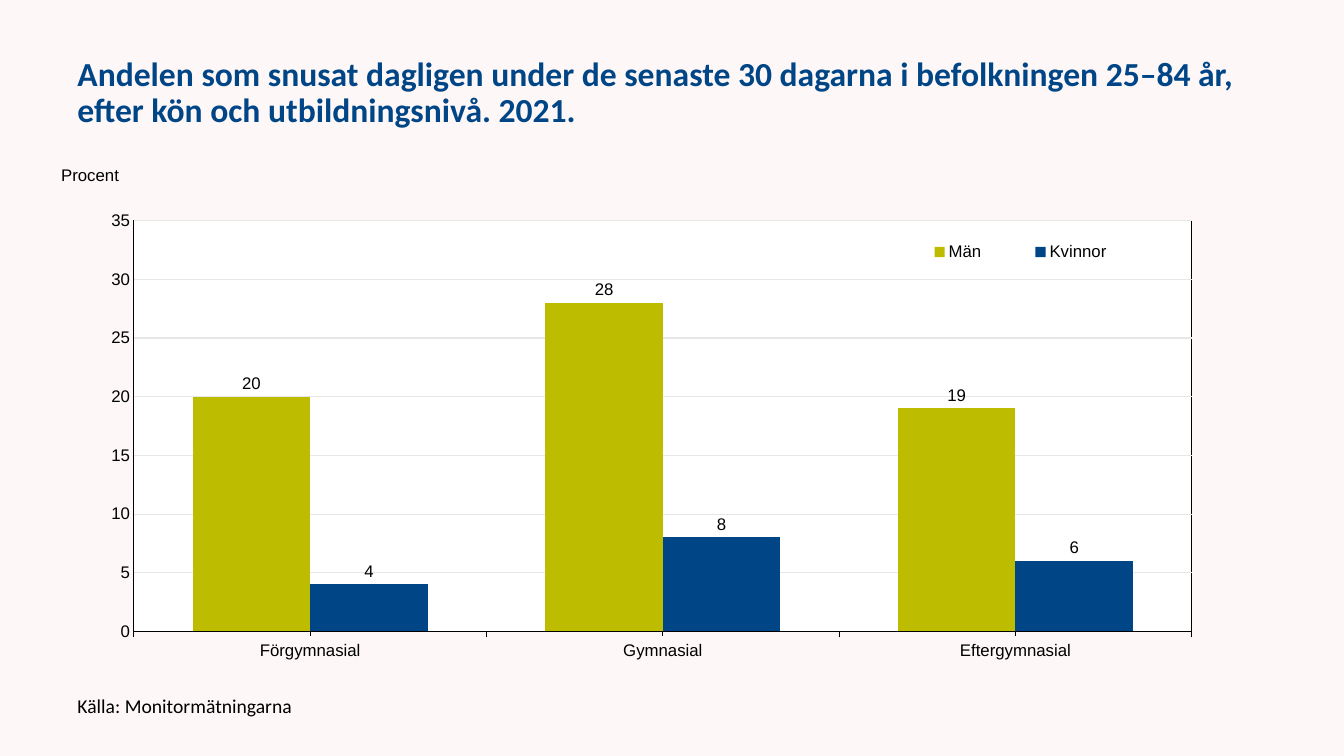
from lxml import etree
from pptx import Presentation
from pptx.chart.data import CategoryChartData
from pptx.dml.color import RGBColor
from pptx.enum import chart as ch, text
from pptx.oxml import parse_xml
from pptx.oxml.ns import nsdecls, qn
from pptx.util import Inches, Pt

COLORS = {"background": "FEF7F7", "navy": "004687", "olive": "BEBC00",
          "black": "000000", "white": "FFFFFF", "grid": "E7E6E6"}


def rgb(name):
    return RGBColor.from_string(COLORS[name])


def place(element, index, target=None, **fractions):
    """Position a chart part by fractions of the chart's width and height."""
    for old in element.findall(qn("c:layout")):
        element.remove(old)
    layout = etree.Element(qn("c:layout"))
    manual = etree.SubElement(layout, qn("c:manualLayout"))
    if target:
        etree.SubElement(manual, qn("c:layoutTarget"), val=target)
    for key in ("x", "y"):
        etree.SubElement(manual, qn(f"c:{key}Mode"), val="edge")
    for key, value in fractions.items():
        etree.SubElement(manual, qn(f"c:{key}"), val=str(value))
    element.insert(index, layout)


prs = Presentation()
prs.slide_width, prs.slide_height = Inches(13.33), Inches(7.5)
s = prs.slides.add_slide(prs.slide_layouts[6])
s.background.fill.solid()
s.background.fill.fore_color.rgb = rgb("background")

# Heading and source line
for wording, top, width, height, size, color, bold in (
        ("Andelen som snusat dagligen under de senaste 30 dagarna i befolkningen "
         "25–84 år, efter kön och utbildningsnivå. 2021.",
         0.3, 12, 1.25, 24, "navy", True),
        ("Källa: Monitormätningarna", 6.83, 6, 0.37, 14, "black", False)):
    sp = s.shapes.add_textbox(Inches(0.67), Inches(top), Inches(width), Inches(height))
    tf = sp.text_frame
    tf.word_wrap = True
    tf.vertical_anchor = text.MSO_ANCHOR.MIDDLE
    p = tf.paragraphs[0]
    p.line_spacing = 0.9
    r = p.add_run()
    r.text = wording
    r.font.name, r.font.size, r.font.bold = "Calibri", Pt(size), bold
    r.font.color.rgb = rgb(color)

# Chart
data = CategoryChartData(number_format="0")
data.categories = ["Förgymnasial", "Gymnasial", "Eftergymnasial"]
data.add_series("Män", (20, 28, 19))
data.add_series("Kvinnor", (4, 8, 6))
chart = s.shapes.add_chart(ch.XL_CHART_TYPE.COLUMN_CLUSTERED, Inches(0.54), Inches(1.55),
                           Inches(12.13), Inches(5.28), data).chart
chart.has_title = False
chart.font.name, chart.font.size = "Arial", Pt(12)
chart.font.color.rgb = rgb("black")

plot = chart.plots[0]
plot.gap_width, plot.overlap = 100, 0
plot.vary_by_categories = False
plot.has_data_labels = True
labels = plot.data_labels
labels.show_value = True
labels.position = ch.XL_LABEL_POSITION.OUTSIDE_END
labels.number_format, labels.number_format_is_linked = "0", False
for series, color in zip(plot.series, ("olive", "navy")):
    series.format.fill.solid()
    series.format.fill.fore_color.rgb = rgb(color)

# Axes
cat_axis, val_axis = chart.category_axis, chart.value_axis
cat_axis.major_tick_mark = cat_axis.minor_tick_mark = ch.XL_TICK_MARK.OUTSIDE
cat_axis.format.line.color.rgb = rgb("black")
cat_axis.format.line.width = Pt(0.75)
val_axis.minimum_scale, val_axis.maximum_scale, val_axis.major_unit = 0, 35, 5
val_axis.major_tick_mark = val_axis.minor_tick_mark = ch.XL_TICK_MARK.NONE
val_axis.format.line.fill.background()
val_axis.tick_labels.number_format = "0"
val_axis.tick_labels.number_format_is_linked = False
grid = val_axis.major_gridlines.format.line
grid.color.rgb, grid.width = rgb("grid"), Pt(0.75)

p = cat_axis.axis_title.text_frame.paragraphs[0]
r = p.add_run()
r.text = "Procent"
r.font.name, r.font.size, r.font.bold = "Arial", Pt(12), False
r.font.color.rgb = rgb("black")

chart.has_legend = True
chart.legend.position = ch.XL_LEGEND_POSITION.BOTTOM
chart.legend.include_in_layout = False

# Placement inside the chart and a framed white plot area
plot_area = chart._chartSpace.chart.plotArea
place(plot_area, 0, "inner", x=0.065, y=0.121, w=0.865, h=0.772)
place(cat_axis.axis_title._element, 1, x=0.003, y=0.01)
place(chart.legend._element, 1, x=0.68, y=0.15, w=0.22, h=0.06)
plot_area.append(parse_xml(
    f'<c:spPr {nsdecls("c", "a")}>'
    f'<a:solidFill><a:srgbClr val="{COLORS["white"]}"/></a:solidFill>'
    f'<a:ln w="9525"><a:solidFill><a:srgbClr val="{COLORS["black"]}"/></a:solidFill></a:ln>'
    '</c:spPr>'))

prs.save("out.pptx")
